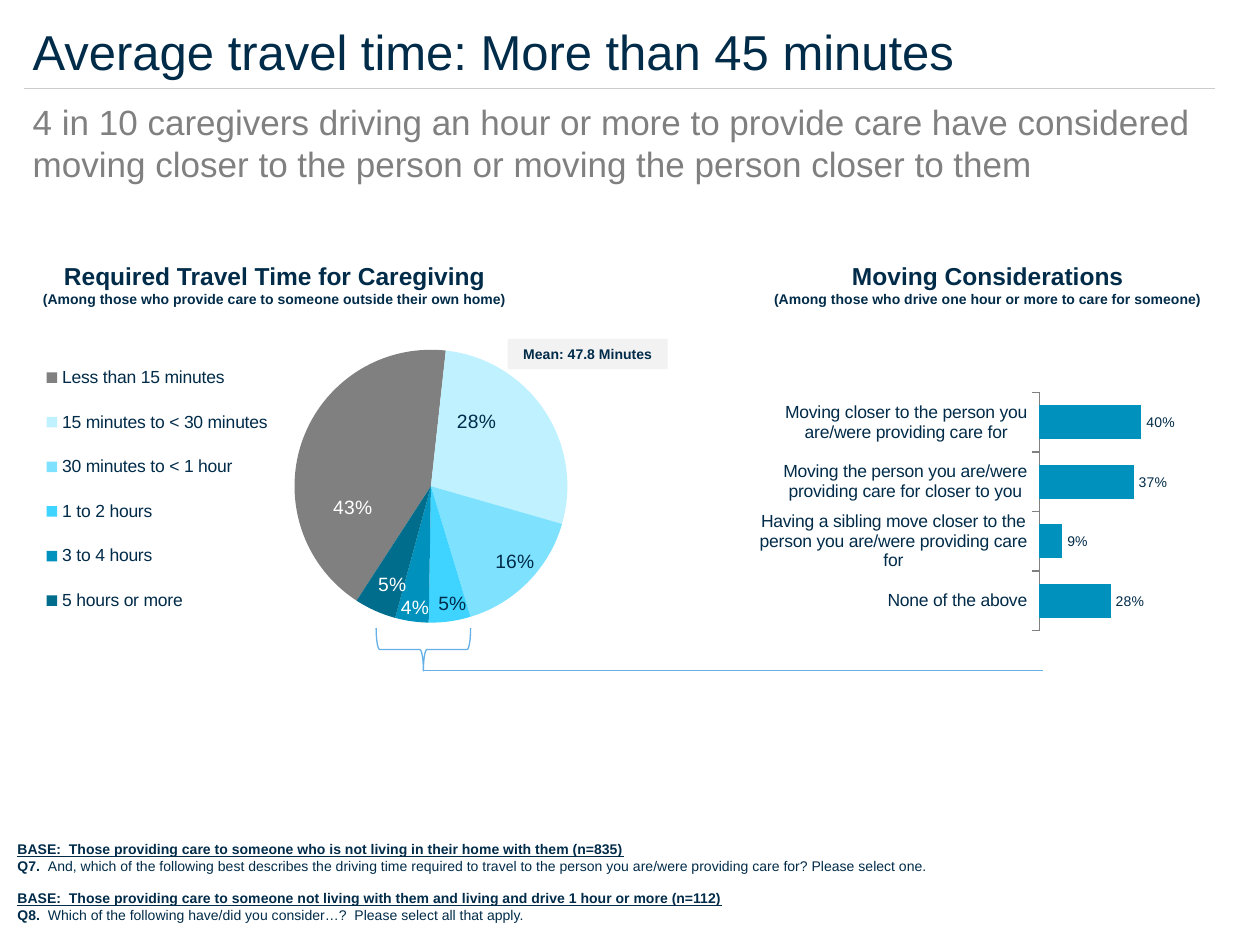
from lxml import etree
from pptx import Presentation
from pptx.chart.data import CategoryChartData
from pptx.dml.color import RGBColor
from pptx.enum.chart import XL_CHART_TYPE, XL_LABEL_POSITION, XL_LEGEND_POSITION, XL_TICK_MARK
from pptx.enum.shapes import MSO_CONNECTOR, MSO_SHAPE
from pptx.enum.text import MSO_ANCHOR, MSO_AUTO_SIZE, PP_ALIGN
from pptx.oxml.ns import qn
from pptx.util import Inches, Pt

LEFT, CENTER = PP_ALIGN.LEFT, PP_ALIGN.CENTER
INSIDE_END, OUTSIDE_END = XL_LABEL_POSITION.INSIDE_END, XL_LABEL_POSITION.OUTSIDE_END
FONT = "Arial"
COLORS = {name: RGBColor.from_string(value) for name, value in {
    "navy": "002B49", "gray": "808080", "white": "FFFFFF", "rule": "CCCCCC",
    "bracket": "65B0E5", "panel": "F2F2F2", "ice": "BFF1FF", "sky": "7EE2FF",
    "bright": "3ED4FF", "blue": "0092BC", "teal": "006D8D"}.items()}

presentation = Presentation()
presentation.slide_width, presentation.slide_height = Inches(10), Inches(7.5)
COLUMN, ROW = presentation.slide_width // 100, presentation.slide_height // 75
slide = presentation.slides.add_slide(presentation.slide_layouts[1])
shapes = slide.shapes


def place(left, top, width, height):
    """Turn columns and rows of the slide grid into lengths."""
    return [round(left * COLUMN), round(top * ROW), round(width * COLUMN), round(height * ROW)]


def add_layout(parent, index, values):
    """Give a chart part a manual layout."""
    for old in parent.findall(qn("c:layout")):
        parent.remove(old)
    layout = etree.Element(qn("c:layout"))
    manual = etree.SubElement(layout, qn("c:manualLayout"))
    for name, value in values.items():
        etree.SubElement(manual, qn("c:" + name)).set("val", str(value))
    parent.insert(index, layout)


# Travel time pie
travel_data = CategoryChartData(number_format="0%")
travel_data.categories = ["Less than 15 minutes", "15 minutes to < 30 minutes", "30 minutes to < 1 hour",
                          "1 to 2 hours", "3 to 4 hours", "5 hours or more"]
travel_data.add_series("Series 1", [0.43, 0.28, 0.16, 0.05, 0.04, 0.05])
pie = shapes.add_chart(XL_CHART_TYPE.PIE, *place(1.1, 17, 47.4, 35.2), travel_data).chart

# Moving considerations bars
moving_data = CategoryChartData(number_format="0%")
moving_data.categories = ["Moving closer to the person you are/were providing care for",
                          "Moving the person you are/were providing care for closer to you",
                          "Having a sibling move closer to the person you are/were providing care for",
                          "None of the above"]
moving_data.add_series("Series 1", [0.4, 0.37, 0.09, 0.28])
bars = shapes.add_chart(XL_CHART_TYPE.BAR_CLUSTERED, *place(59.5, 29.3, 45.9, 21.8), moving_data).chart

# Settings shared by both charts
for chart, plot_area, label_size, label_position in (
        (pie, (0.47, 0.256, 0.457, 0.773), 11, INSIDE_END),
        (bars, (0.501, 0.085, 0.441, 0.867), 8, OUTSIDE_END)):
    chart.has_title = chart.has_legend = False
    chart.font.name, chart.font.size = FONT, Pt(18)
    chart.font.color.rgb = COLORS["navy"]
    plot = chart.plots[0]
    add_layout(plot._element.getparent(), 0,
               {"layoutTarget": "inner", "xMode": "edge", "yMode": "edge", **dict(zip("xywh", plot_area))})
    plot.has_data_labels = True
    labels = plot.data_labels
    labels.show_value, labels.position = True, label_position
    labels.number_format, labels.number_format_is_linked = "0%", False
    labels.font.name, labels.font.size = FONT, Pt(label_size)
    labels.font.color.rgb = COLORS["navy"]

# Pie slices: fill, label colour, label shift
pie_plot = pie.plots[0]
pie_plot.vary_by_categories = True
etree.SubElement(pie_plot._element, qn("c:firstSliceAng")).set("val", "213")
for index, (fill, label_color, shift) in enumerate((
        ("gray", "white", (0.04, 0.12)), ("ice", "navy", (-0.07, -0.01)), ("sky", "navy", (0.02, -0.01)),
        ("bright", "navy", (0.03, 0)), ("blue", "white", (-0.02, 0.01)), ("teal", "white", (0, -0.02)))):
    point = pie_plot.series[0].points[index]
    point.format.fill.solid()
    point.format.fill.fore_color.rgb = COLORS[fill]
    label = point.data_label
    label.font.name, label.font.size = FONT, Pt(11)
    label.font.color.rgb = COLORS[label_color]
    label.position = INSIDE_END
    add_layout(label._dLbl, 1, dict(zip("xy", shift)))
pie.has_legend = True
pie.legend.position = XL_LEGEND_POSITION.LEFT
pie.legend.include_in_layout = False
pie.legend.font.name, pie.legend.font.size = FONT, Pt(10)
pie.legend.font.color.rgb = COLORS["navy"]
add_layout(pie.legend._element, 1,
           {"xMode": "edge", "yMode": "edge", "x": 0.04, "y": 0.29, "w": 0.4, "h": 0.66})

# Bars and their axes
bars.plots[0].gap_width, bars.plots[0].vary_by_categories = 75, False
bar_fill = bars.plots[0].series[0].format.fill
bar_fill.solid()
bar_fill.fore_color.rgb = COLORS["blue"]
category_axis, value_axis = bars.category_axis, bars.value_axis
category_axis.reverse_order = True
category_axis.major_tick_mark = XL_TICK_MARK.OUTSIDE
category_axis.tick_labels.font.name, category_axis.tick_labels.font.size = FONT, Pt(10)
category_axis.tick_labels.font.color.rgb = COLORS["navy"]
category_axis.format.line.color.rgb = COLORS["gray"]
category_axis.format.line.width = Pt(0.75)
value_axis.minimum_scale, value_axis.maximum_scale = 0, 1
value_axis.has_major_gridlines = value_axis.visible = False

# Mean panel
mean = shapes.add_shape(MSO_SHAPE.RECTANGLE, *place(40.3, 26.9, 12.7, 2.4))
mean.shadow.inherit = False
mean.fill.solid()
mean.fill.fore_color.rgb = COLORS["panel"]
mean.line.fill.background()

# Bracket under the long trips
bracket = shapes.add_shape(MSO_SHAPE.RIGHT_BRACE, *place(31.9, 47.8, 3.4, 7.5))
bracket.rotation = 90
bracket.shadow.inherit = False
bracket.fill.background()
bracket.line.color.rgb = COLORS["bracket"]
bracket.line.width = Pt(0.75)

# Bracket line and title rule
for start, end, row, color in ((33.6, 82.8, 53.2, "bracket"), (1.9, 96.4, 7, "rule")):
    line = shapes.add_connector(MSO_CONNECTOR.STRAIGHT, *place(start, row, end, row))
    line.line.color.rgb = COLORS[color]
    line.line.width = Pt(0.75)
    etree.SubElement(line._element.spPr, qn("a:effectLst"))

# Title and subtitle placeholders
title, subtitle = shapes.title, slide.placeholders[1]
title.left, title.top, title.width, title.height = place(1.6, 1.2, 100.2, 5.7)
subtitle.left, subtitle.top, subtitle.width, subtitle.height = place(1.6, 7.5, 97.1, 7.7)
subtitle_properties = subtitle.text_frame.paragraphs[0]._p.get_or_add_pPr()
subtitle_properties.set("marL", "0")
subtitle_properties.set("indent", "0")
etree.SubElement(subtitle_properties, qn("a:buNone"))

# Headings and question notes
travel_heading = shapes.add_textbox(*place(2.3, 20.2, 39, 4.7))
moving_heading = shapes.add_textbox(*place(58.9, 20.2, 39, 4.7))
notes = shapes.add_textbox(*place(0.4, 66.2, 84.4, 7.7))

# Text: shape, alignment, colour, paragraphs of (space before, runs of (text, size, style))
for shape, alignment, color, paragraphs in (
        (title, LEFT, "navy", [(0, [("Average travel time: More than 45 minutes", 28, "")])]),
        (subtitle, LEFT, "gray", [(0, [(
            "4 in 10 caregivers driving an hour or more to provide care have considered "
            "moving closer to the person or moving the person closer to them", 20, "")])]),
        (mean, CENTER, "navy", [(0, [("Mean: 47.8 Minutes", 8, "b")])]),
        (travel_heading, CENTER, "navy", [
            (0, [("Required Travel Time for Caregiving", 14, "b")]),
            (0, [("(Among those who provide care to someone outside their own home)", 8, "b")])]),
        (moving_heading, CENTER, "navy", [
            (0, [("Moving Considerations", 14, "b")]),
            (0, [("(Among those who drive one hour or more to care for someone)", 8, "b")])]),
        (notes, LEFT, "navy", [
            (0, [("BASE:  Those providing care to someone who is not living in their home with them (n=835)",
                  8, "bu")]),
            (0, [("Q7.  ", 8, "b"),
                 ("And, which of the following best describes the driving time required to travel to the "
                  "person you are/were providing care for? Please select one.", 8, "")]),
            (9.2, [("BASE:  Those providing care to someone not living with them and living and drive "
                    "1 hour or more (n=112)", 8, "bu")]),
            (0, [("Q8.  ", 8, "b"),
                 ("Which of the following have/did you consider…?  Please select all that apply.", 8, "")])])):
    frame = shape.text_frame
    frame.word_wrap, frame.auto_size = True, MSO_AUTO_SIZE.NONE
    frame.vertical_anchor = MSO_ANCHOR.MIDDLE if shape is mean else MSO_ANCHOR.TOP
    for index, (space_before, runs) in enumerate(paragraphs):
        paragraph = frame.add_paragraph() if index else frame.paragraphs[0]
        paragraph.alignment, paragraph.space_before = alignment, Pt(space_before)
        for text, size, style in runs:
            run = paragraph.add_run()
            run.text = text
            run.font.name, run.font.size = FONT, Pt(size)
            run.font.color.rgb = COLORS[color]
            run.font.bold, run.font.underline = "b" in style, "u" in style

presentation.save("out.pptx")
